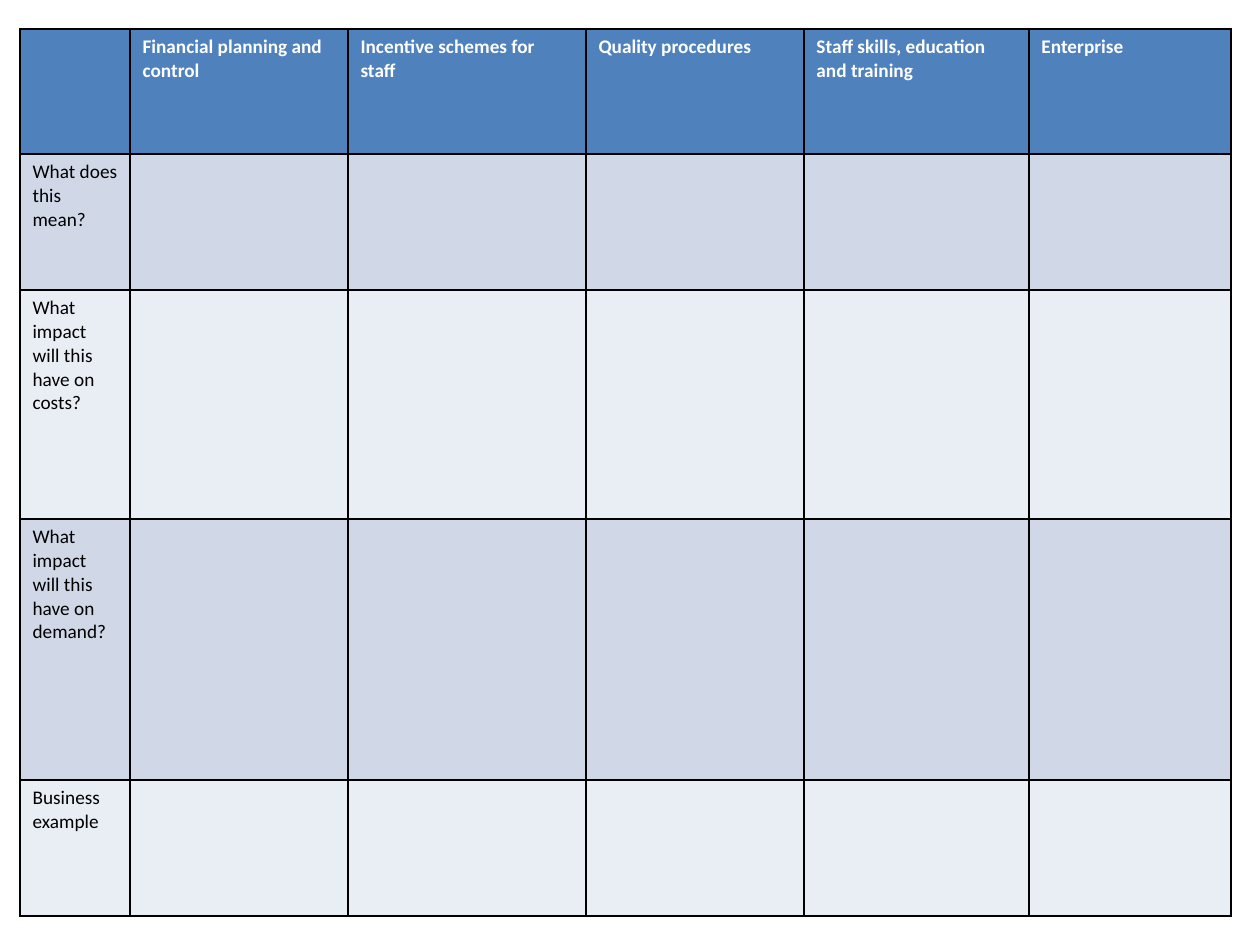
from pptx import Presentation
from pptx.dml.color import RGBColor
from pptx.oxml import parse_xml
from pptx.oxml.ns import nsdecls
from pptx.util import Pt

PX = 914400 / 126
COLORS = {
    "header": "4F81BD",
    "dark_band": "D0D8E8",
    "light_band": "E9EDF4",
    "border": "000000",
    "header_text": "FFFFFF",
    "question_text": "000000",
}


def emu(px):
    return round(px * PX)


def add_borders(cell):
    props = cell._tc.get_or_add_tcPr()
    for position, side in enumerate(("lnL", "lnR", "lnT", "lnB")):
        props.insert(position, parse_xml(
            f'<a:{side} {nsdecls("a")} w="{Pt(1)}"><a:solidFill>'
            f'<a:srgbClr val="{COLORS["border"]}"/></a:solidFill></a:{side}>'))


prs = Presentation()
prs.slide_width, prs.slide_height = emu(1260), emu(945)
slide = prs.slides.add_slide(prs.slide_layouts[6])

# Worksheet content: topics across, questions down
topics = ["", "Financial planning and control", "Incentive schemes for staff",
          "Quality procedures", "Staff skills, education and training", "Enterprise"]
questions = ["What does this mean?", "What impact will this have on costs?",
             "What impact will this have on demand?", "Business example"]
topic_widths = [110, 218, 238, 218, 225, 202]
row_heights = [125, 136, 229, 261, 136]

# Worksheet grid
worksheet = slide.shapes.add_table(
    len(row_heights), len(topic_widths), emu(20), emu(29),
    emu(sum(topic_widths)), emu(sum(row_heights))).table
for column, width in zip(worksheet.columns, topic_widths):
    column.width = emu(width)
for row, height in zip(worksheet.rows, row_heights):
    row.height = emu(height)

# Cell text, fills and borders
rows = [topics] + [[question] + [""] * (len(topics) - 1) for question in questions]
for r, row_texts in enumerate(rows):
    is_header = r == 0
    band = "header" if is_header else "dark_band" if r % 2 else "light_band"
    text_color = COLORS["header_text" if is_header else "question_text"]
    for c, text in enumerate(row_texts):
        cell = worksheet.cell(r, c)
        cell.fill.solid()
        cell.fill.fore_color.rgb = RGBColor.from_string(COLORS[band])
        add_borders(cell)
        if text:
            cell.text_frame.text = text
            font = cell.text_frame.paragraphs[0].runs[0].font
            font.name, font.size, font.bold = "Calibri", Pt(11), is_header
            font.color.rgb = RGBColor.from_string(text_color)

prs.save("out.pptx")
